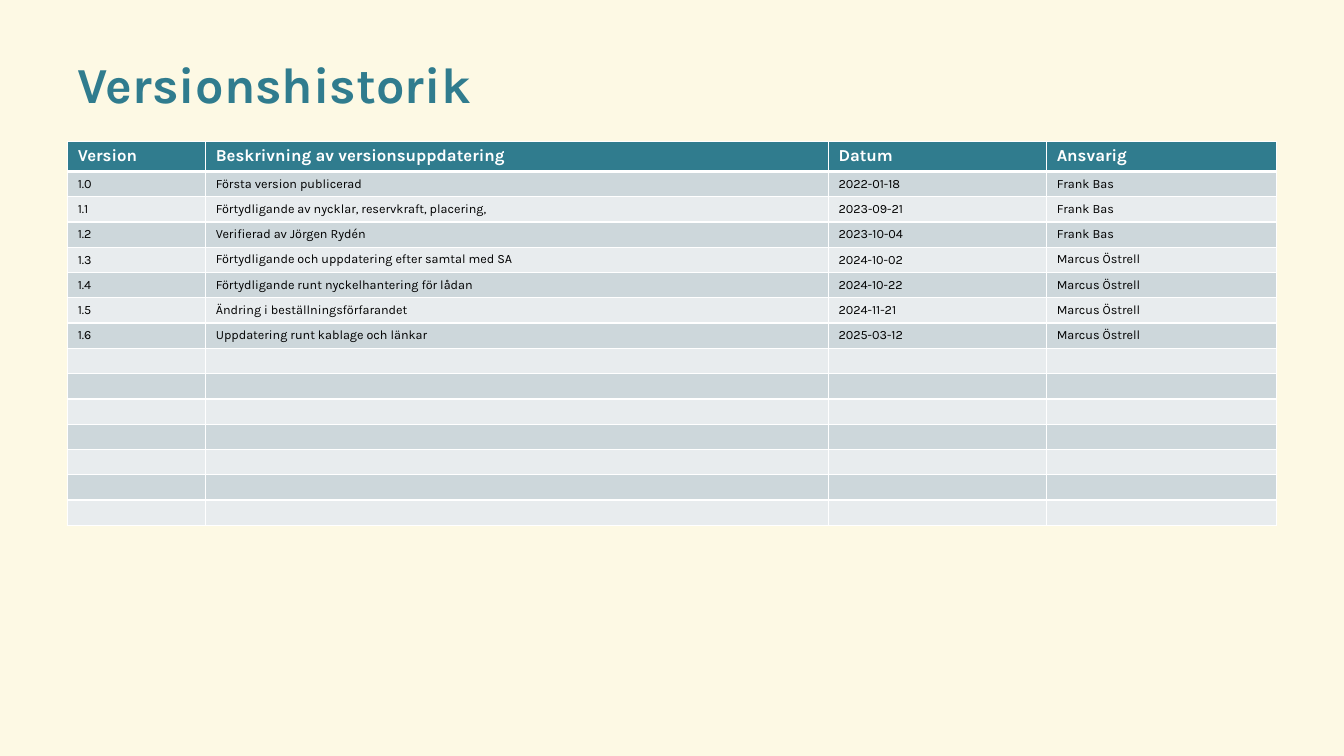
from lxml import etree
from pptx import Presentation
from pptx.dml.color import RGBColor
from pptx.enum import text
from pptx.oxml.ns import qn
from pptx.util import Pt

# Content
TITLE = "Versionshistorik"
HEAD = ("Version", "Beskrivning av versionsuppdatering", "Datum", "Ansvarig")
ROWS = [
    ("1.0", "Första version publicerad", "2022-01-18", "Frank Bas"),
    ("1.1", "Förtydligande av nycklar, reservkraft, placering,", "2023-09-21", "Frank Bas"),
    ("1.2", "Verifierad av Jörgen Rydén", "2023-10-04", "Frank Bas"),
    ("1.3", "Förtydligande och uppdatering efter samtal med SA", "2024-10-02", "Marcus Östrell"),
    ("1.4", "Förtydligande runt nyckelhantering för lådan", "2024-10-22", "Marcus Östrell"),
    ("1.5", "Ändring i beställningsförfarandet", "2024-11-21", "Marcus Östrell"),
    ("1.6", "Uppdatering runt kablage och länkar", "2025-03-12", "Marcus Östrell"),
]
SPARE = 7
COLORS = {"back": "FDF9E4", "teal": "307C8E", "dark": "CDD7DB",
          "light": "E8ECEE", "white": "FFFFFF", "black": "000000"}
FONT = "Karla"

# Layout in points
LEFT, WIDTH = 48.4, 864
TOP = 100.8
COLS = (98.6, 444.8, 155.9, 164.4)
HEAD_H, ROW_H = 21.2, 17.8


def rgb(name):
    return RGBColor.from_string(COLORS[name])


def style(par, size, color, bold=False):
    font = par.font
    font.name, font.size, font.bold = FONT, Pt(size), bold
    font.color.rgb = rgb(color)


def border(cell, sides):
    props = cell._tc.get_or_add_tcPr()
    for side, width in sides.items():
        line = etree.SubElement(props, qn("a:ln" + side), w=str(Pt(width)))
        fill = etree.SubElement(line, qn("a:solidFill"))
        etree.SubElement(fill, qn("a:srgbClr"), val=COLORS["white"])


def main():
    prs = Presentation()
    prs.slide_width, prs.slide_height = Pt(960), Pt(540)
    slide = prs.slides.add_slide(prs.slide_layouts[6])
    slide.background.fill.solid()
    slide.background.fill.fore_color.rgb = rgb("back")

    # Title
    box = slide.shapes.add_textbox(Pt(LEFT), Pt(28.1), Pt(WIDTH), Pt(59))
    frame = box.text_frame
    frame.word_wrap = True
    frame.vertical_anchor = text.MSO_ANCHOR.MIDDLE
    par = frame.paragraphs[0]
    par.text, par.line_spacing = TITLE, 1.1
    style(par, 36, "teal", True)

    # Version table
    rows = [HEAD, *ROWS] + [("",) * len(HEAD)] * SPARE
    high = HEAD_H + ROW_H * (len(rows) - 1)
    table = slide.shapes.add_table(len(rows), len(COLS), Pt(LEFT), Pt(TOP),
                                   Pt(WIDTH), Pt(high)).table
    table.horz_banding = False
    for col, width in zip(table.columns, COLS):
        col.width = Pt(width)
    for r, row in enumerate(rows):
        head = r == 0
        table.rows[r].height = Pt(HEAD_H if head else ROW_H)
        size = 12 if head else 9
        for c, words in enumerate(row):
            cell = table.cell(r, c)
            border(cell, {"L": 1, "R": 1, "T": 3 if r == 1 else 1, "B": 3 if head else 1})
            cell.fill.solid()
            cell.fill.fore_color.rgb = rgb("teal" if head else "dark" if r % 2 else "light")
            if not head and c in (0, 2):
                cell.vertical_anchor = text.MSO_ANCHOR.MIDDLE
            par = cell.text_frame.paragraphs[0]
            par.text = words
            style(par, size, "white" if head else "black", head)
            if not words:  # keeps spare rows low
                end = etree.SubElement(par._p, qn("a:endParaRPr"), sz=str(size * 100))
                etree.SubElement(end, qn("a:latin"), typeface=FONT)

    prs.save("out.pptx")


if __name__ == "__main__":
    main()
